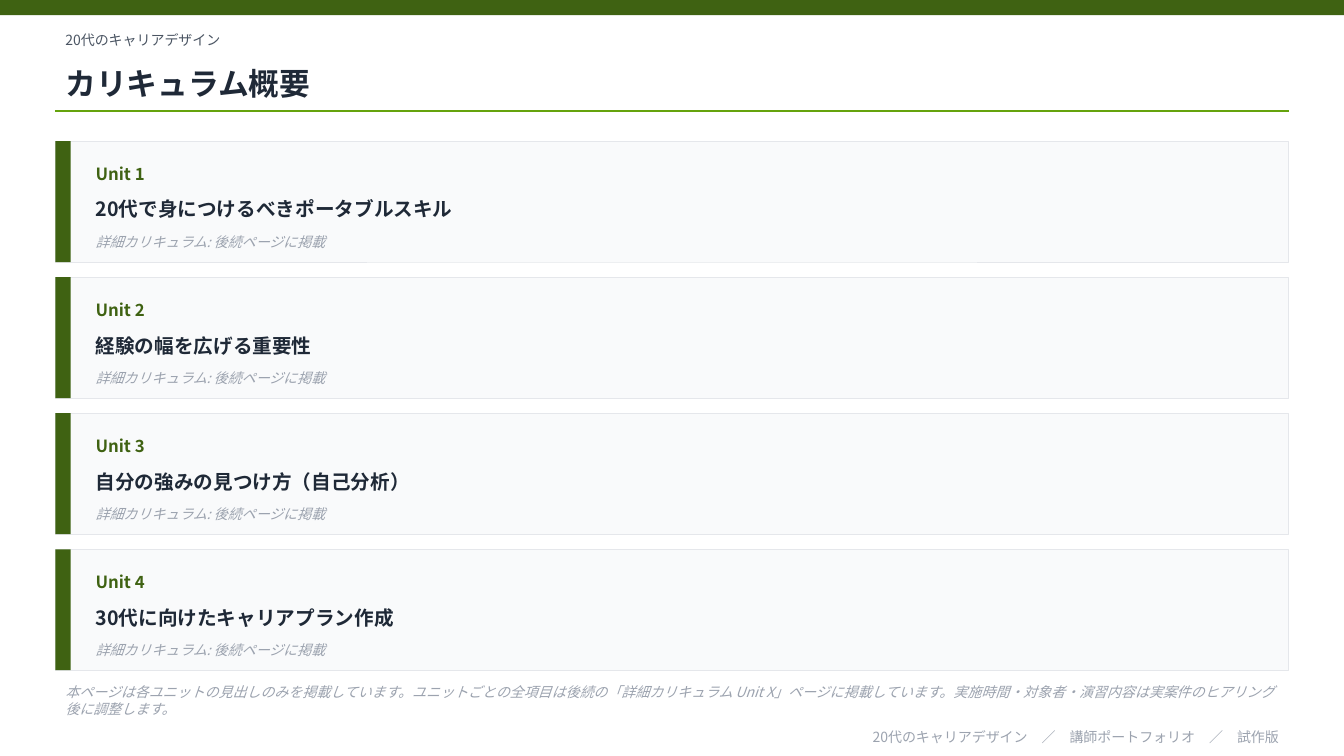
from lxml.etree import SubElement
from pptx import Presentation
from pptx.dml.color import RGBColor
from pptx.enum.shapes import MSO_CONNECTOR, MSO_SHAPE
from pptx.enum.text import MSO_ANCHOR, PP_ALIGN
from pptx.oxml.ns import qn
from pptx.util import Inches, Pt

COURSE = "20代のキャリアデザイン"
TITLE = "カリキュラム概要"
UNITS = [
    "20代で身につけるべきポータブルスキル",
    "経験の幅を広げる重要性",
    "自分の強みの見つけ方（自己分析）",
    "30代に向けたキャリアプラン作成",
]
DETAIL = "詳細カリキュラム: 後続ページに掲載"
NOTE = (
    "本ページは各ユニットの見出しのみを掲載しています。"
    "ユニットごとの全項目は後続の「詳細カリキュラム Unit X」ページに掲載しています。"
    "実施時間・対象者・演習内容は実案件のヒアリング後に調整します。"
)
FOOTER = f"{COURSE}　／　講師ポートフォリオ　／　試作版"

FONT = "Noto Sans CJK JP"
COLORS = {
    "accent": "3F6212",
    "rule": "65A30D",
    "card": "F9FAFB",
    "border": "E5E7EB",
    "ink": "1F2937",
    "subtle": "4B5563",
    "muted": "9CA3AF",
}
SLIDE_WIDTH, SLIDE_HEIGHT = 13.33, 7.5
MARGIN = 0.55
CONTENT_WIDTH = SLIDE_WIDTH - 2 * MARGIN
BAR = 0.15
CARD_TOP, CARD_HEIGHT, CARD_GAP = 1.4, 1.2, 0.15
TEXT_LEFT, TEXT_WIDTH = 0.85, 11.73


def color(name):
    return RGBColor.from_string(COLORS[name])


def add_rectangle(slide, left, top, width, height, fill, border=None):
    shape = slide.shapes.add_shape(
        MSO_SHAPE.RECTANGLE, Inches(left), Inches(top), Inches(width), Inches(height)
    )
    shape.shadow.inherit = False
    shape.fill.solid()
    shape.fill.fore_color.rgb = color(fill)
    if border:
        shape.line.color.rgb = color(border)
        shape.line.width = Pt(0.5)
    else:
        shape.line.fill.background()


def add_text(slide, left, top, width, height, text, size, ink,
             bold=False, italic=False, align=PP_ALIGN.LEFT):
    box = slide.shapes.add_textbox(
        Inches(left), Inches(top), Inches(width), Inches(height)
    )
    frame = box.text_frame
    frame.word_wrap = True
    frame.vertical_anchor = MSO_ANCHOR.MIDDLE
    paragraph = frame.paragraphs[0]
    paragraph.alignment = align
    run = paragraph.add_run()
    run.text = text
    font = run.font
    font.name, font.size = FONT, Pt(size)
    font.bold, font.italic = bold, italic
    font.color.rgb = color(ink)
    SubElement(run._r.get_or_add_rPr(), qn("a:ea"), typeface=FONT)


def add_rule(slide, top):
    rule = slide.shapes.add_connector(
        MSO_CONNECTOR.STRAIGHT, Inches(MARGIN), Inches(top),
        Inches(MARGIN + CONTENT_WIDTH), Inches(top),
    )
    rule.line.color.rgb = color("rule")
    rule.line.width = Pt(1)
    SubElement(rule._element.spPr, qn("a:effectLst"))


def add_unit(slide, number, heading):
    top = CARD_TOP + (number - 1) * (CARD_HEIGHT + CARD_GAP)
    add_rectangle(slide, MARGIN, top, CONTENT_WIDTH, CARD_HEIGHT, "card", "border")
    add_rectangle(slide, MARGIN, top, BAR, CARD_HEIGHT, "accent")
    add_text(slide, TEXT_LEFT, top + 0.12, 1.5, 0.4,
             f"Unit {number}", 12, "accent", bold=True)
    add_text(slide, TEXT_LEFT, top + 0.45, TEXT_WIDTH, 0.45,
             heading, 14, "ink", bold=True)
    add_text(slide, TEXT_LEFT, top + 0.85, TEXT_WIDTH, 0.3,
             DETAIL, 10, "muted", italic=True)


def main():
    """Build the curriculum overview slide."""
    presentation = Presentation()
    presentation.slide_width = Inches(SLIDE_WIDTH)
    presentation.slide_height = Inches(SLIDE_HEIGHT)
    slide = presentation.slides.add_slide(presentation.slide_layouts[6])

    add_rectangle(slide, 0, 0, SLIDE_WIDTH, BAR, "accent")
    add_text(slide, MARGIN, 0.25, CONTENT_WIDTH, 0.3, COURSE, 10, "subtle")
    add_text(slide, MARGIN, 0.55, CONTENT_WIDTH, 0.55, TITLE, 22, "ink", bold=True)
    add_rule(slide, 1.1)
    for number, heading in enumerate(UNITS, start=1):
        add_unit(slide, number, heading)
    add_text(slide, MARGIN, 6.75, CONTENT_WIDTH, 0.4, NOTE, 10, "muted", italic=True)
    add_text(slide, MARGIN, 7.2, CONTENT_WIDTH, 0.22, FOOTER, 10, "muted",
             align=PP_ALIGN.RIGHT)

    presentation.save("out.pptx")


if __name__ == "__main__":
    main()
